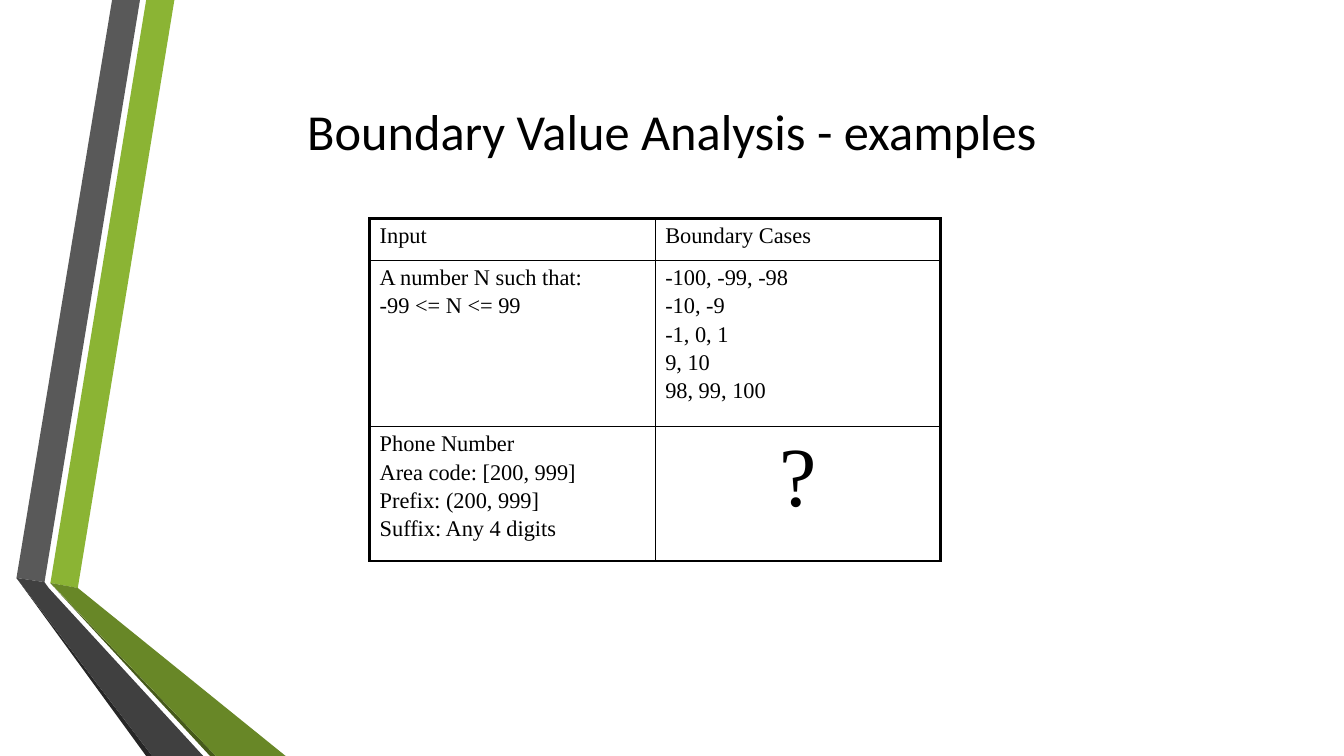
from lxml.etree import SubElement as Sub
from pptx import Presentation
from pptx.dml.color import RGBColor as RGB
from pptx.enum.text import MSO_ANCHOR as Anchor, PP_ALIGN as Align
from pptx.oxml.ns import qn
from pptx.util import Inches, Pt

BLACK = RGB(0x00, 0x00, 0x00)
GRAY = RGB(0x59, 0x59, 0x59)
SLATE = RGB(0x40, 0x40, 0x40)
COAL = RGB(0x26, 0x26, 0x26)
LIME = RGB(0x8B, 0xB4, 0x34)
GREEN = RGB(0x68, 0x87, 0x27)
MOSS = RGB(0x46, 0x5A, 0x1A)

COLS, ROWS = 80, 45  # square grid over the whole slide
THICK, THIN = 2.25, 1

# Ribbon outlines in grid columns and rows
BANDS = [
    (LIME, [(3, 34.7), (4.63, 35), (10.38, 0), (8.7, 0)]),
    (GRAY, [(8.33, 0), (6.67, 0), (0.98, 34.4), (2.65, 34.65)]),
    (COAL, [(0.98, 34.4), (8.7, 45), (9.06, 45)]),
    (MOSS, [(3, 34.72), (12.5, 45), (12.85, 45)]),
    (GREEN, [(3, 34.7), (12.85, 45), (17, 45), (4.63, 35)]),
    (SLATE, [(12.1, 45), (2.9, 35), (2.65, 34.65), (0.98, 34.4), (9.06, 45)]),
]

CASES = [
    (["Input"], ["Boundary Cases"]),
    (["A number N such that:", "-99 <= N <= 99"],
     ["-100, -99, -98", "-10, -9", "-1, 0, 1", "9, 10", "98, 99, 100"]),
    (["Phone Number", "Area code: [200, 999]", "Prefix: (200, 999]",
      "Suffix: Any 4 digits"], ["?"]),
]


class Deck:
    head, body = "Calibri", "Times New Roman"

    def __init__(self):
        self.prs = Presentation()
        self.prs.slide_width, self.prs.slide_height = Inches(13.33), Inches(7.5)
        self.slide = self.prs.slides.add_slide(self.prs.slide_layouts[5])

    def x(self, cols):
        return round(self.prs.slide_width * cols / COLS)

    def y(self, rows):
        return round(self.prs.slide_height * rows / ROWS)

    def text(self, par, words, size, font, align=Align.LEFT):
        par.alignment = align
        run = par.add_run()
        run.text = words
        run.font.size, run.font.name = Pt(size), font
        run.font.color.rgb = BLACK

    def title(self, words, left, top, wide, high):
        box = self.slide.shapes.title
        box.left, box.top = self.x(left), self.y(top)
        box.width, box.height = self.x(wide), self.y(high)
        box.text_frame.vertical_anchor = Anchor.MIDDLE
        self.text(box.text_frame.paragraphs[0], words, 36, self.head, Align.CENTER)

    def band(self, color, spots):
        first, *rest = [(self.x(c), self.y(r)) for c, r in spots]
        pen = self.slide.shapes.build_freeform(*first)
        pen.add_line_segments(rest, close=True)
        shape = pen.convert_to_shape()
        shape.shadow.inherit = False
        shape.fill.solid()
        shape.fill.fore_color.rgb = color
        shape.line.fill.background()

    def edge(self, cell, side, width):
        line = Sub(cell._tc.get_or_add_tcPr(), qn("a:ln" + side), w=str(Pt(width)))
        Sub(Sub(line, qn("a:solidFill")), qn("a:srgbClr"), val=str(BLACK))

    def cell(self, cell, lines, size, align):
        frame = cell.text_frame
        for i, words in enumerate(lines):
            par = frame.add_paragraph() if i else frame.paragraphs[0]
            par.space_before = Pt(2.5 if i else 0)
            self.text(par, words, size, self.body, align)

    def table(self, data, left, top, wide, highs):
        last, end = len(data) - 1, len(data[0]) - 1
        grid = self.slide.shapes.add_table(
            len(data), len(data[0]), self.x(left), self.y(top),
            self.x(wide), self.y(sum(highs))).table
        grid.first_row = grid.horz_banding = False
        for r, row in enumerate(data):
            grid.rows[r].height = self.y(highs[r])
            for c, lines in enumerate(row):
                cell = grid.cell(r, c)
                big = lines == ["?"]
                self.cell(cell, lines, 60 if big else 16,
                          Align.CENTER if big else Align.LEFT)
                # Thick frame outside, thin rules inside
                outer = {"L": c == 0, "R": c == end, "T": r == 0, "B": r == last}
                for side, out in outer.items():
                    self.edge(cell, side, THICK if out else THIN)
                cell.fill.background()


def main():
    deck = Deck()
    # Ribbon on the left
    for color, spots in BANDS:
        deck.band(color, spots)
    # Heading and table
    deck.title("Boundary Value Analysis - examples", 6, 4, 68, 7.5)
    deck.table(CASES, 22, 13, 34, [2.5, 9.9, 8])
    deck.prs.save("out.pptx")


if __name__ == "__main__":
    main()
